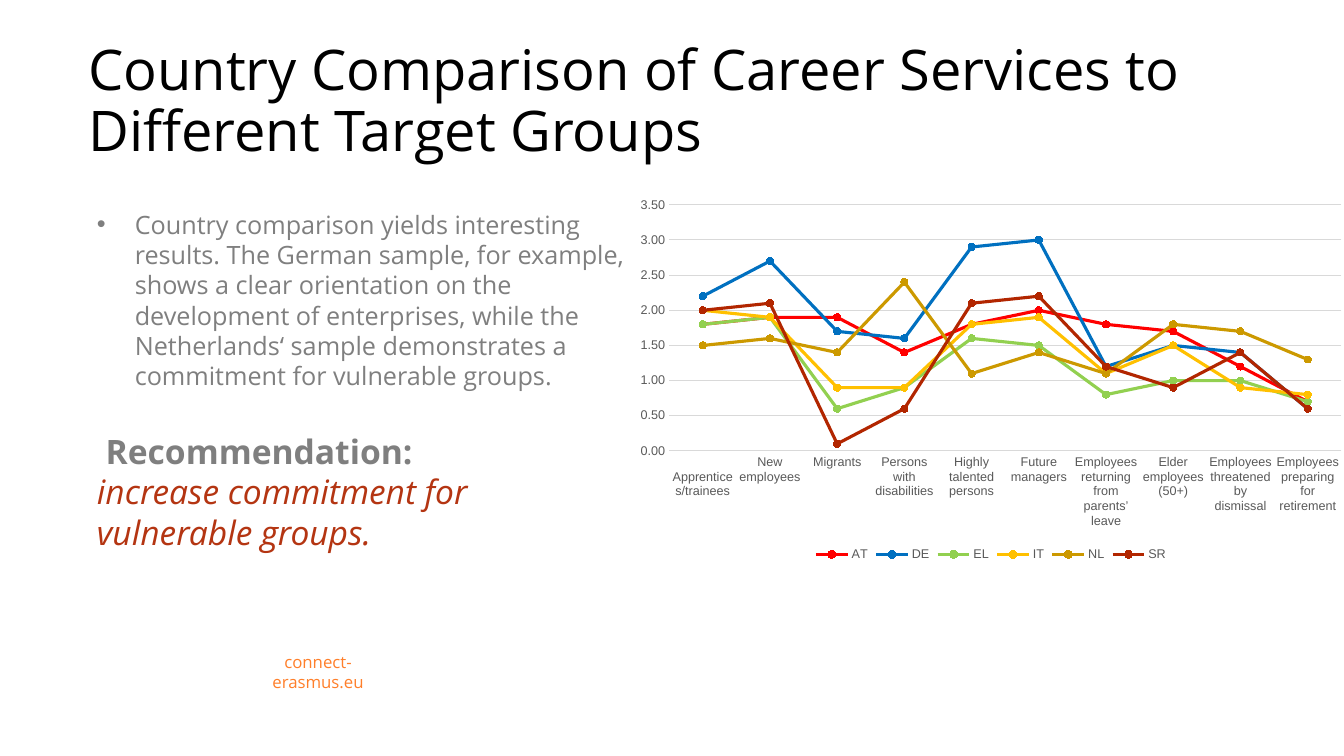
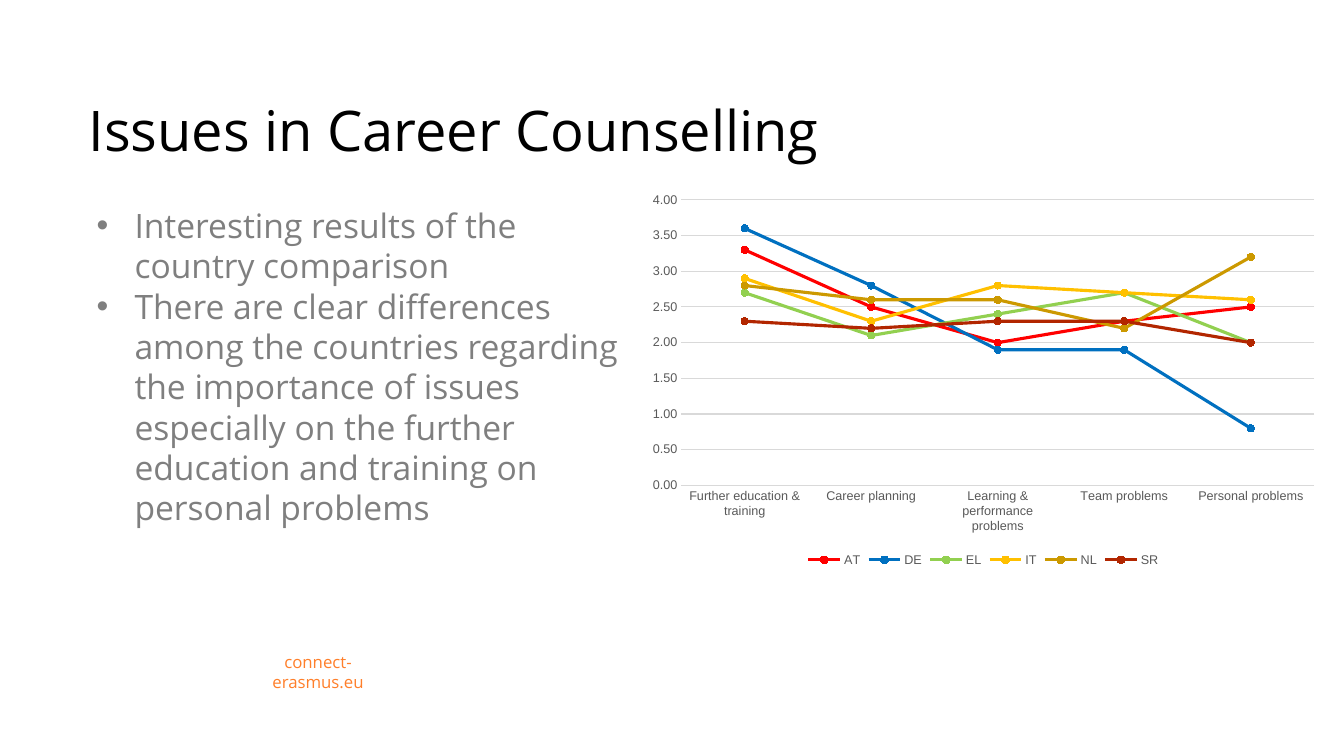
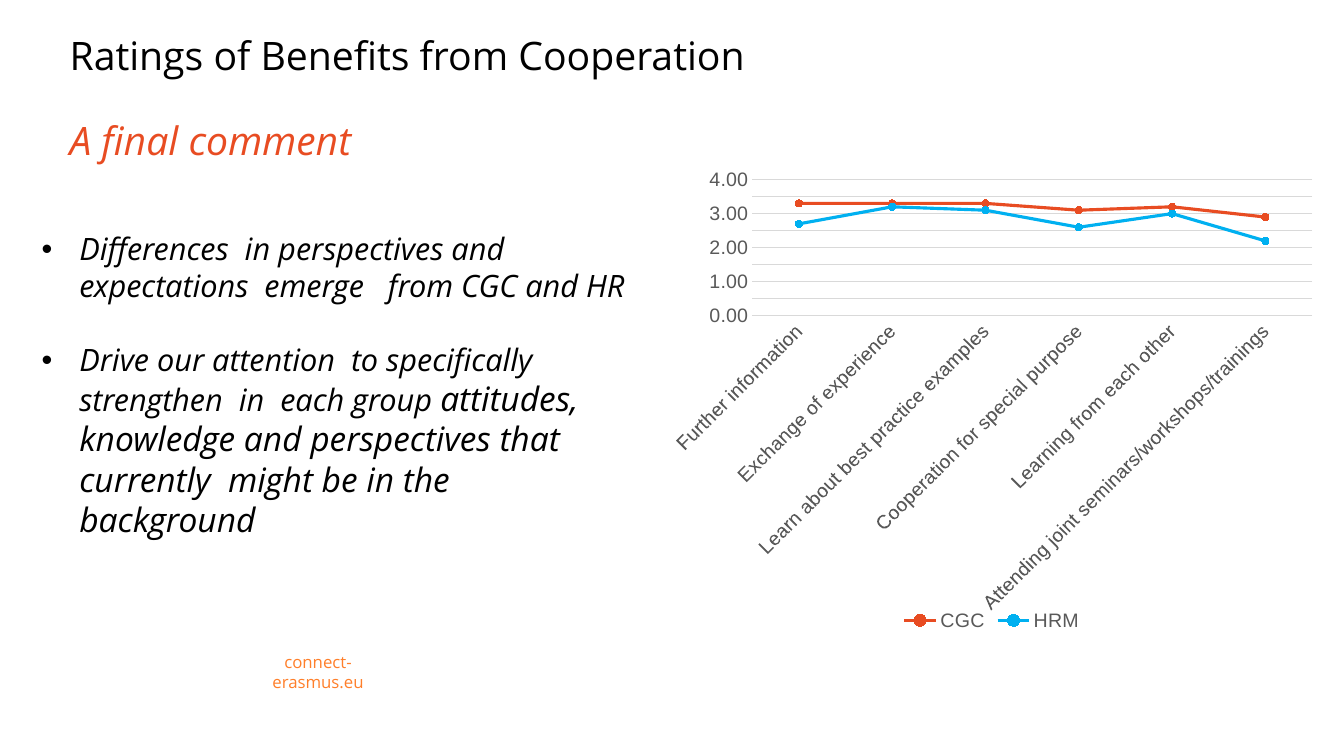
"""Build three slides on career services, counselling issues and cooperation benefits."""
import dataclasses

import lxml.etree
import pptx
import pptx.chart.data
import pptx.dml.color
import pptx.enum.chart
import pptx.enum.text
import pptx.oxml.ns
import pptx.util

Pt = pptx.util.Pt
RGB = pptx.dml.color.RGBColor.from_string
Align = pptx.enum.text.PP_ALIGN
Anchor = pptx.enum.text.MSO_ANCHOR
qn = pptx.oxml.ns.qn


@dataclasses.dataclass(frozen=True)
class Theme:
    text_font: str = "Open Sans"
    chart_font: str = "Arial"
    black: str = "000000"
    grey: str = "7F7F7F"
    axis_text: str = "595959"
    grid: str = "D9D9D9"
    footer: str = "FF7F2A"
    rust: str = "B43512"
    orange: str = "E84C22"
    blue: str = "00B0F0"
    title_size: int = 40
    small_title_size: int = 28
    large_size: int = 24
    medium_size: int = 22
    body_size: int = 18
    footer_size: int = 12
    indent: int = 27
    title_spacing: float = 0.9
    line_height: float = 1.2


theme = Theme()
country_colors = {
    "AT": "FF0000", "DE": "0070C0", "EL": "92D050",
    "IT": "FFC000", "NL": "CC9900", "SR": "B22600",
}
group_colors = {"CGC": theme.orange, "HRM": theme.blue}


def add_text(frame, text, size, color, bold=False, italic=False, align=Align.LEFT,
             bullet=False, first_indent=0, before=0, spacing=None, continued=False):
    paragraph = frame.paragraphs[-1]
    if not continued:
        if paragraph.runs:
            paragraph = frame.add_paragraph()
        properties = paragraph._p.get_or_add_pPr()
        if bullet:
            properties.set("marL", str(Pt(theme.indent)))
            properties.set("indent", str(-Pt(theme.indent)))
            bullet_color = lxml.etree.SubElement(properties, qn("a:buClr"))
            lxml.etree.SubElement(bullet_color, qn("a:srgbClr")).set("val", color)
            lxml.etree.SubElement(properties, qn("a:buFont")).set("typeface", theme.chart_font)
            lxml.etree.SubElement(properties, qn("a:buChar")).set("char", "•")
        elif first_indent:
            properties.set("indent", str(Pt(first_indent)))
        paragraph.alignment = align
        if before:
            paragraph.space_before = Pt(before)
        if spacing:
            paragraph.line_spacing = spacing
    run = paragraph.add_run()
    run.text = text
    run.font.name = theme.text_font
    run.font.size = Pt(size)
    run.font.bold = bold
    run.font.italic = italic
    run.font.color.rgb = RGB(color)


def prepare_frame(shape, box, anchor):
    shape.left, shape.top, shape.width, shape.height = map(Pt, box)
    frame = shape.text_frame
    frame.word_wrap = True
    frame.auto_size = pptx.enum.text.MSO_AUTO_SIZE.NONE
    frame.vertical_anchor = anchor
    frame.margin_left = frame.margin_right = Pt(7.2)
    frame.margin_top = frame.margin_bottom = Pt(3.6)
    return frame


large_grey = dict(size=theme.large_size, color=theme.grey)
black_italic = dict(size=theme.medium_size, color=theme.black, italic=True)
large_title = dict(size=theme.title_size, color=theme.black)
small_title = dict(size=theme.small_title_size, color=theme.black)

topics = [
    dict(
        title_left=56,
        title=[("Country Comparison of Career Services to Different Target Groups", large_title)],
        body_box=(62.2, 145.8, 394.5, 320),
        body=[
            ("Country comparison yields interesting results. The German sample, for example, "
             "shows a clear orientation on the development of enterprises, while the "
             "Netherlands‘ sample demonstrates a commitment for vulnerable groups.",
             dict(size=theme.body_size, color=theme.grey, bullet=True)),
            ("Recommendation:",
             dict(large_grey, bold=True, first_indent=6.2,
                  before=theme.large_size * theme.line_height)),
            ("increase commitment for vulnerable groups.",
             dict(size=theme.large_size, color=theme.rust, italic=True)),
        ],
        chart_box=(447.2, 135.7, 521.3, 268.5),
        chart_size=9, label_angle=0, axis_max=3.5, colors=country_colors,
        categories=[
            " Apprentices/trainees", "New employees", "Migrants", "Persons with disabilities",
            "Highly talented persons", "Future managers",
            "Employees returning from parents’ leave", "Elder employees (50+)",
            "Employees threatened by dismissal", "Employees preparing for retirement",
        ],
        ratings={
            "AT": (1.8, 1.9, 1.9, 1.4, 1.8, 2, 1.8, 1.7, 1.2, 0.7),
            "DE": (2.2, 2.7, 1.7, 1.6, 2.9, 3, 1.2, 1.5, 1.4, 0.6),
            "EL": (1.8, 1.9, 0.6, 0.9, 1.6, 1.5, 0.8, 1, 1, 0.7),
            "IT": (2, 1.9, 0.9, 0.9, 1.8, 1.9, 1.1, 1.5, 0.9, 0.8),
            "NL": (1.5, 1.6, 1.4, 2.4, 1.1, 1.4, 1.1, 1.8, 1.7, 1.3),
            "SR": (2, 2.1, 0.1, 0.6, 2.1, 2.2, 1.2, 0.9, 1.4, 0.6),
        },
    ),
    dict(
        title_left=56,
        title=[("Issues in Career Counselling", large_title)],
        body_box=(62, 142.8, 394.5, 320),
        body=[
            ("Interesting results of the country comparison", dict(large_grey, bullet=True)),
            ("There are clear differences among the countries regarding the importance of "
             "issues especially on the further education and training on personal problems",
             dict(large_grey, bullet=True)),
        ],
        chart_box=(456.5, 132, 492, 276),
        chart_size=9, label_angle=0, axis_max=4, colors=country_colors,
        categories=[
            "Further education & training", "Career planning",
            "Learning & performance problems", "Team problems", "Personal problems",
        ],
        ratings={
            "AT": (3.3, 2.5, 2, 2.3, 2.5),
            "DE": (3.6, 2.8, 1.9, 1.9, 0.8),
            "EL": (2.7, 2.1, 2.4, 2.7, 2),
            "IT": (2.9, 2.3, 2.8, 2.7, 2.6),
            "NL": (2.8, 2.6, 2.6, 2.2, 3.2),
            "SR": (2.3, 2.2, 2.3, 2.3, 2),
        },
    ),
    dict(
        title_left=42.5,
        title=[
            ("Ratings of Benefits from Cooperation", small_title),
            ("A final comment",
             dict(small_title, color=theme.orange, italic=True,
                  before=theme.small_title_size * theme.line_height * theme.title_spacing)),
        ],
        body_box=(22.6, 160.8, 433, 252),
        body=[
            ("Differences  in perspectives and expectations  emerge   from CGC and HR",
             dict(black_italic, bullet=True)),
            ("Drive our attention  to specifically  strengthen  in  each group ",
             dict(black_italic, bullet=True, before=theme.medium_size * theme.line_height)),
            ("attitudes, knowledge and perspectives that  currently  might be in the background",
             dict(black_italic, size=theme.large_size, continued=True)),
        ],
        chart_box=(470.2, 120.4, 476.5, 333.5),
        chart_size=14, label_angle=-45, axis_max=4, colors=group_colors,
        categories=[
            "Further information", "Exchange of experience",
            "Learn about best practice examples", "Cooperation for special purpose",
            "Learning from each other", "Attending joint seminars/workshops/trainings",
        ],
        ratings={
            "CGC": (3.3, 3.3, 3.3, 3.1, 3.2, 2.9),
            "HRM": (2.7, 3.2, 3.1, 2.6, 3, 2.2),
        },
    ),
]

deck = pptx.Presentation()
deck.slide_width, deck.slide_height = Pt(960), Pt(540)
title_only = deck.slide_layouts[5]

for topic in topics:
    slide = deck.slides.add_slide(title_only)

    heading = prepare_frame(slide.shapes.title, (topic["title_left"], 5.4, 842, 115),
                            Anchor.BOTTOM)
    for text, style in topic["title"]:
        add_text(heading, text, spacing=theme.title_spacing, **style)

    findings = prepare_frame(slide.shapes.add_textbox(0, 0, 0, 0), topic["body_box"], Anchor.TOP)
    for text, style in topic["body"]:
        add_text(findings, text, **style)

    footer = prepare_frame(slide.shapes.add_textbox(0, 0, 0, 0), (164.2, 469, 126, 21.5),
                           Anchor.MIDDLE)
    add_text(footer, "connect-erasmus.eu", size=theme.footer_size, color=theme.footer,
             align=Align.CENTER)

    ratings = pptx.chart.data.CategoryChartData(number_format="###0.00")
    ratings.categories = topic["categories"]
    for group, values in topic["ratings"].items():
        ratings.add_series(group, values)
    chart = slide.shapes.add_chart(pptx.enum.chart.XL_CHART_TYPE.LINE_MARKERS,
                                   *map(Pt, topic["chart_box"]), ratings).chart
    chart.has_title = False
    chart.has_legend = True
    chart.legend.position = pptx.enum.chart.XL_LEGEND_POSITION.BOTTOM
    chart.legend.include_in_layout = False

    rating_axis, category_axis = chart.value_axis, chart.category_axis
    for font in (chart.font, chart.legend.font, rating_axis.tick_labels.font,
                 category_axis.tick_labels.font):
        font.name = theme.chart_font
        font.size = Pt(topic["chart_size"])
        font.color.rgb = RGB(theme.axis_text)
    for axis in (rating_axis, category_axis):
        axis.major_tick_mark = axis.minor_tick_mark = pptx.enum.chart.XL_TICK_MARK.NONE
    rating_axis.minimum_scale = 0
    rating_axis.maximum_scale = topic["axis_max"]
    rating_axis.major_unit = 0.5
    rating_axis.tick_labels.number_format = "###0.00"
    rating_axis.tick_labels.number_format_is_linked = False
    rating_axis.format.line.fill.background()
    rating_axis.has_major_gridlines = True
    for rule in (rating_axis.major_gridlines.format.line, category_axis.format.line):
        rule.color.rgb = RGB(theme.grid)
        rule.width = Pt(0.75)
    label_body = category_axis._element.xpath("c:txPr/a:bodyPr")[0]
    label_body.set("rot", str(topic["label_angle"] * 60000))
    label_body.set("vert", "horz")

    plot = chart.plots[0]
    plot.vary_by_categories = False
    for group in plot.series:
        color = RGB(topic["colors"][group.name])
        group.smooth = False
        group.format.line.color.rgb = color
        group.format.line.width = Pt(2.25)
        group.marker.style = pptx.enum.chart.XL_MARKER_STYLE.CIRCLE
        group.marker.size = 5
        group.marker.format.fill.solid()
        group.marker.format.fill.fore_color.rgb = color
        group.marker.format.line.color.rgb = color

deck.save("out.pptx")
